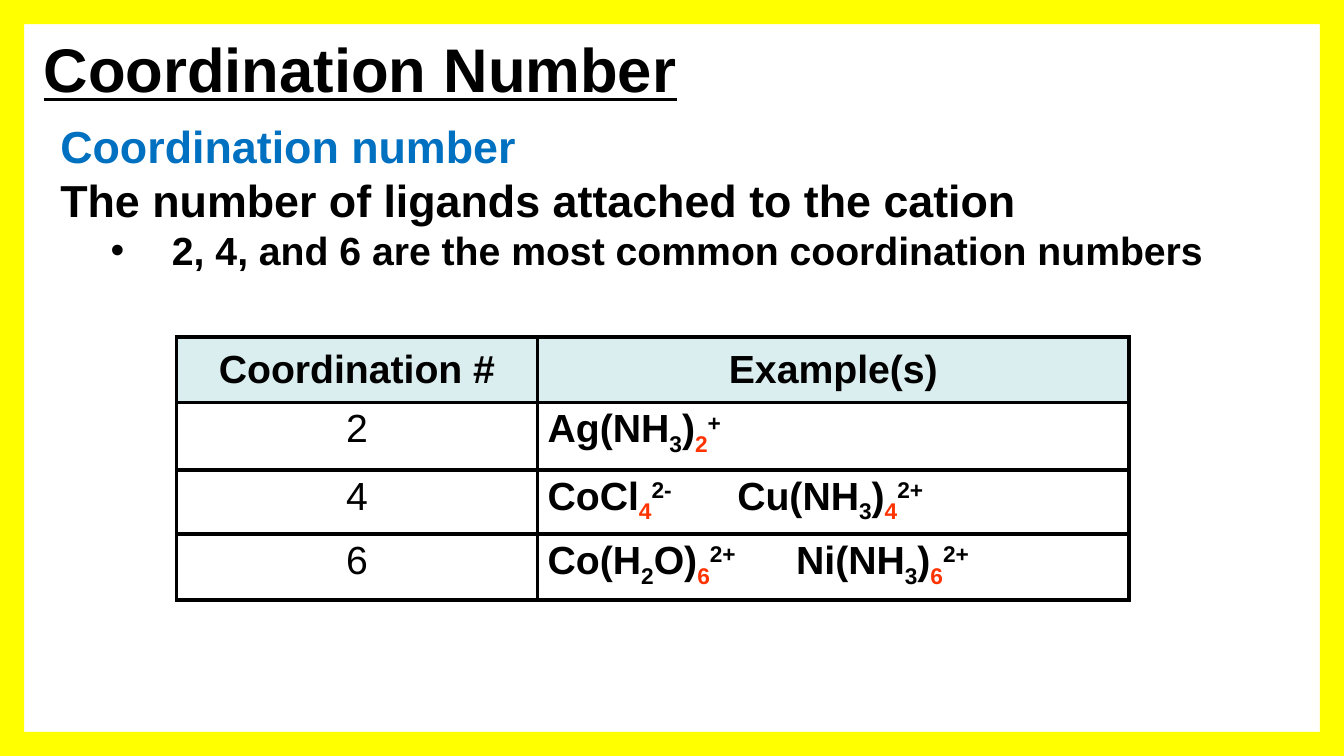
from dataclasses import dataclass

from lxml.etree import SubElement
from pptx import Presentation
from pptx.dml.color import RGBColor
from pptx.enum.shapes import MSO_SHAPE
from pptx.enum.text import MSO_ANCHOR, MSO_AUTO_SIZE, PP_ALIGN
from pptx.oxml.ns import qn
from pptx.util import Pt


@dataclass(frozen=True)
class Theme:
    font: str = "Arial"
    black: str = "000000"
    white: str = "FFFFFF"
    blue: str = "0070C0"
    red: str = "FF3300"
    yellow: str = "FFFF00"
    header: str = "DAEDEF"
    title_size: int = 44
    body_size: int = 32
    detail_size: int = 28
    border: int = 3


THEME = Theme()
SUBSCRIPT = {"baseline": -25}
LIGANDS = {"baseline": -25, "color": THEME.red}
CHARGE = {"baseline": 30}

HEADINGS = ["Coordination #", "Example(s)"]
# Each row: coordination number, tab stop of the second formula, formula parts.
EXAMPLES = [
    ("2", None, [("Ag(NH", {}), ("3", SUBSCRIPT), (")", {}), ("2", LIGANDS), ("+", CHARGE)]),
    ("4", 135.5, [("CoCl", {}), ("4", LIGANDS), ("2-", CHARGE),
                  ("\tCu(NH", {}), ("3", SUBSCRIPT), (")", {}), ("4", LIGANDS), ("2+", CHARGE)]),
    ("6", 177.5, [("Co(H", {}), ("2", SUBSCRIPT), ("O)", {}), ("6", LIGANDS), ("2+", CHARGE),
                  ("\tNi(NH", {}), ("3", SUBSCRIPT), (")", {}), ("6", LIGANDS), ("2+", CHARGE)]),
]


def add_text(paragraph, text, size=THEME.detail_size, color=THEME.black,
             bold=True, underline=None, baseline=0):
    """Add a run; baseline is a percentage, negative for subscripts."""
    run = paragraph.add_run()
    run.text = text
    font = run.font
    font.name, font.size = THEME.font, Pt(size)
    font.bold, font.underline = bold, underline
    font.color.rgb = RGBColor.from_string(color)
    if baseline:
        font._element.set("baseline", str(baseline * 1000))


def fill_solid(fill, color):
    fill.solid()
    fill.fore_color.rgb = RGBColor.from_string(color)


class SlideBuilder:
    def __init__(self, slide, theme):
        self.slide = slide
        self.theme = theme

    def title(self, text, left, top, width, height):
        title = self.slide.shapes.title
        title.left, title.top, title.width, title.height = map(Pt, (left, top, width, height))
        frame = title.text_frame
        frame.auto_size = MSO_AUTO_SIZE.NONE
        frame.vertical_anchor = MSO_ANCHOR.MIDDLE
        paragraph = frame.paragraphs[0]
        paragraph.alignment = PP_ALIGN.LEFT
        add_text(paragraph, text, size=self.theme.title_size, underline=True)

    def text_box(self, lines, left, top, width, height):
        """Write (text, format, bulleted) lines into a wrapping box."""
        box = self.slide.shapes.add_textbox(*map(Pt, (left, top, width, height)))
        frame = box.text_frame
        frame.word_wrap = True
        frame.auto_size = MSO_AUTO_SIZE.SHAPE_TO_FIT_TEXT
        for index, (text, text_format, bulleted) in enumerate(lines):
            paragraph = frame.add_paragraph() if index else frame.paragraphs[0]
            add_text(paragraph, text, **text_format)
            if bulleted:
                self.bullet(paragraph)

    def bullet(self, paragraph):
        paragraph.level = 1
        properties = paragraph._p.get_or_add_pPr()
        properties.set("marL", str(Pt(72)))
        properties.set("indent", str(Pt(-36)))
        SubElement(properties, qn("a:buFont"), typeface=self.theme.font)
        SubElement(properties, qn("a:buChar"), char="•")

    def table(self, left, top, column_widths, row_heights):
        shape = self.slide.shapes.add_table(
            len(row_heights), len(column_widths),
            *map(Pt, (left, top, sum(column_widths), sum(row_heights))))
        table = shape.table
        table.first_row = table.horz_banding = False
        for column, width in zip(table.columns, column_widths):
            column.width = Pt(width)
        for row, height in zip(table.rows, row_heights):
            row.height = Pt(height)
        return table

    def cell(self, cell, parts, fill=THEME.white, alignment=PP_ALIGN.LEFT,
             anchor=MSO_ANCHOR.TOP, tab_stop=None):
        self.cell_borders(cell)
        fill_solid(cell.fill, fill)
        cell.vertical_anchor = anchor
        paragraph = cell.text_frame.paragraphs[0]
        paragraph.alignment = alignment
        properties = paragraph._p.get_or_add_pPr()
        spacing = SubElement(properties, qn("a:spcBef"))
        SubElement(spacing, qn("a:spcPct"), val="20000")
        if tab_stop:
            tabs = SubElement(properties, qn("a:tabLst"))
            SubElement(tabs, qn("a:tab"), pos=str(Pt(tab_stop)), algn="l")
        for text, text_format in parts:
            add_text(paragraph, text, **text_format)

    def cell_borders(self, cell):
        properties = cell._tc.get_or_add_tcPr()
        for side in ("lnL", "lnR", "lnT", "lnB"):
            line = SubElement(properties, qn(f"a:{side}"), w=str(Pt(self.theme.border)))
            line_fill = SubElement(line, qn("a:solidFill"))
            SubElement(line_fill, qn("a:srgbClr"), val=self.theme.black)

    def frame(self, width, height, thickness):
        """Draw a border whose thickness is a share of the shorter side."""
        shape = self.slide.shapes.add_shape(MSO_SHAPE.FRAME, 0, 0, width, height)
        shape.adjustments[0] = thickness
        shape.shadow.inherit = False
        fill_solid(shape.fill, self.theme.yellow)
        shape.line.fill.background()


def main():
    presentation = Presentation()
    presentation.slide_width, presentation.slide_height = Pt(960), Pt(540)
    slide = presentation.slides.add_slide(presentation.slide_layouts[5])
    builder = SlideBuilder(slide, THEME)

    builder.title("Coordination Number", 24, 16, 873, 65.5)
    builder.text_box([
        ("Coordination number", {"size": THEME.body_size, "color": THEME.blue}, False),
        ("The number of ligands attached to the cation", {"size": THEME.body_size}, False),
        (" 2, 4, and 6 are the most common coordination numbers", {}, True),
    ], 36, 81.5, 885, 119)

    table = builder.table(126, 240.5, [258, 422.5], [47, 48, 46, 47])
    for column, heading in enumerate(HEADINGS):
        builder.cell(table.cell(0, column), [(heading, {})], fill=THEME.header,
                     alignment=PP_ALIGN.CENTER, anchor=MSO_ANCHOR.MIDDLE)
    for row, (number, tab_stop, formulas) in enumerate(EXAMPLES, start=1):
        builder.cell(table.cell(row, 0), [(number, {"bold": False})], alignment=PP_ALIGN.CENTER)
        builder.cell(table.cell(row, 1), formulas, tab_stop=tab_stop)

    builder.frame(presentation.slide_width, presentation.slide_height, 0.032)
    presentation.save("out.pptx")


if __name__ == "__main__":
    main()
